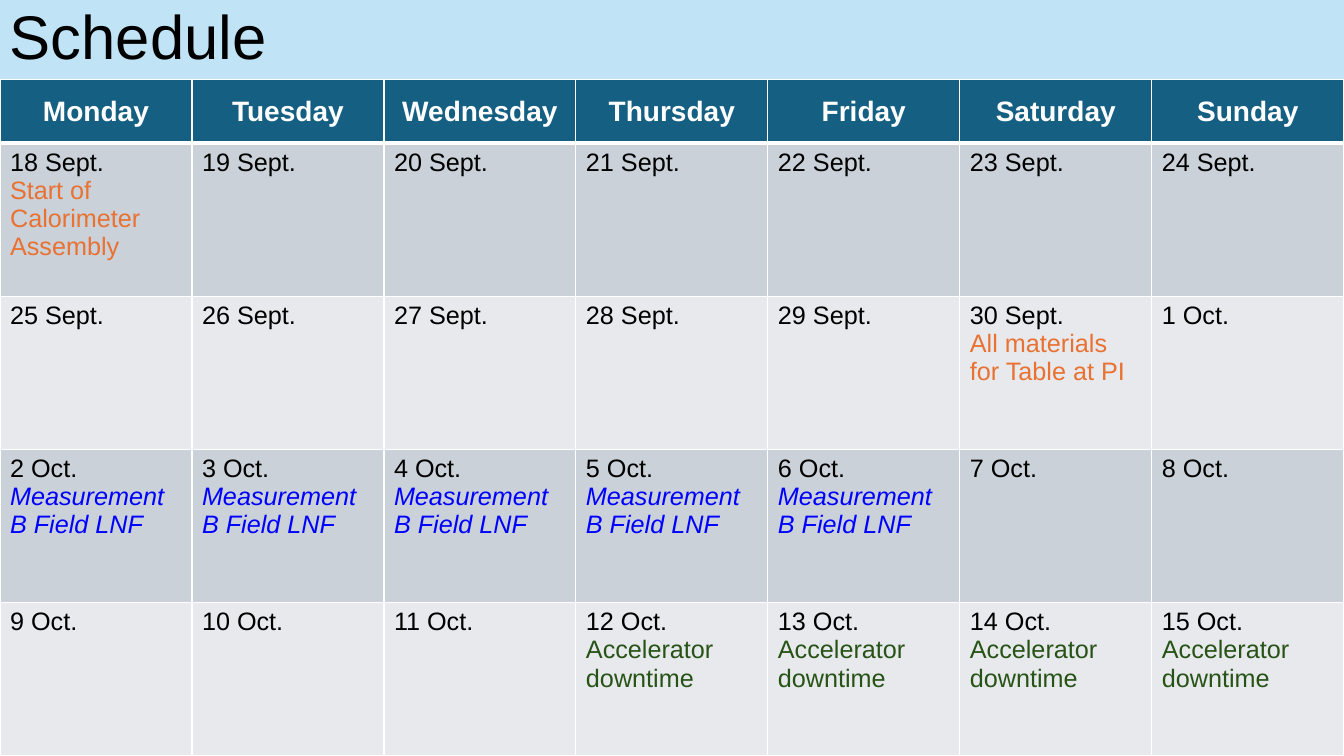
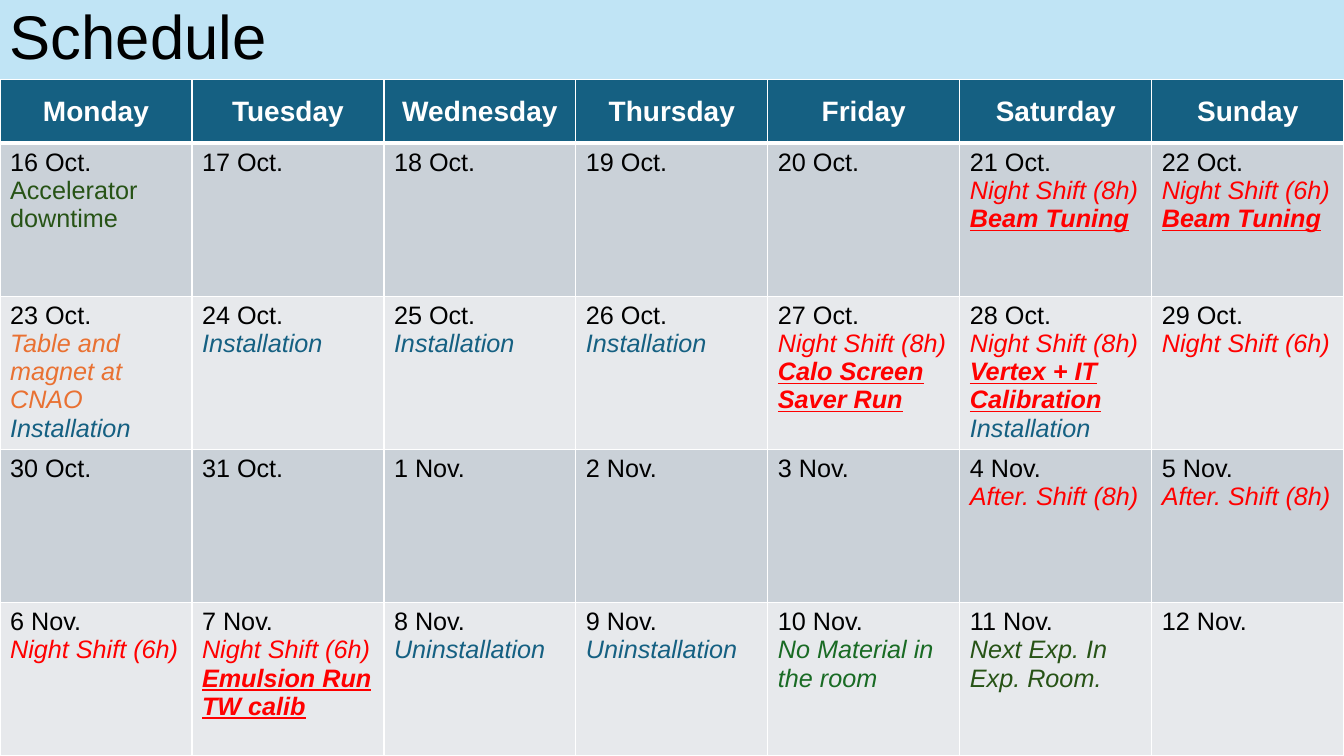
from lxml import etree
from pptx import Presentation
from pptx import util as u
from pptx.dml.color import RGBColor
from pptx.enum import shapes, text
from pptx.oxml import ns

FONT = "Arial"
COLOURS = {
    "band": "C0E4F5",
    "header": "156082",
    "odd_week": "CAD1D8",
    "even_week": "E7E9EC",
    "white": "FFFFFF",
    "black": "000000",
    "orange": "E97132",
    "blue": "0000FF",
    "dark_green": "275316",
    "green": "196B24",
    "teal": "156082",
    "red": "FF0000",
}
STYLES = {
    "date": ("black", False, False),
    "delivery": ("orange", False, False),
    "transport": ("orange", True, False),
    "field": ("blue", True, False),
    "downtime": ("dark_green", False, False),
    "next": ("dark_green", True, False),
    "clear": ("green", True, False),
    "install": ("teal", True, False),
    "shift": ("red", True, False),
    "run": ("red", True, True),
}
DAYS = ["Monday", "Tuesday", "Wednesday", "Thursday", "Friday", "Saturday", "Sunday"]
WEEKS = 4
MONTHS = [("Sept.", 18, 30), ("Oct.", 1, 31), ("Nov.", 1, 12)]
DATES = [f"{day} {month}" for month, first, last in MONTHS for day in range(first, last + 1)]

MEASUREMENT = [("field", "Measurement B Field LNF")]
DOWNTIME = [("downtime", "Accelerator downtime")]
INSTALLATION = [("install", "Installation")]
UNINSTALLATION = [("install", "Uninstallation")]
LONG_NIGHT = [("shift", "Night Shift (8h)")]
SHORT_NIGHT = [("shift", "Night Shift (6h)")]
AFTERNOON = [("shift", "After. Shift (8h)")]
TUNING = [("run", "Beam Tuning")]

EVENTS = {
    "18 Sept.": [("delivery", "Start of Calorimeter Assembly")],
    "30 Sept.": [("delivery", "All materials for Table at PI")],
    **{f"{day} Oct.": MEASUREMENT for day in range(2, 7)},
    **{f"{day} Oct.": DOWNTIME for day in range(12, 17)},
    "21 Oct.": LONG_NIGHT + TUNING,
    "22 Oct.": SHORT_NIGHT + TUNING,
    "23 Oct.": [("transport", "Table and magnet at CNAO")] + INSTALLATION,
    **{f"{day} Oct.": INSTALLATION for day in range(24, 27)},
    "27 Oct.": LONG_NIGHT + [("run", "Calo Screen Saver Run")],
    "28 Oct.": LONG_NIGHT + [("run", "Vertex + IT Calibration")] + INSTALLATION,
    "29 Oct.": SHORT_NIGHT,
    "4 Nov.": AFTERNOON,
    "5 Nov.": AFTERNOON,
    "6 Nov.": SHORT_NIGHT,
    "7 Nov.": SHORT_NIGHT + [("run", "Emulsion Run"), ("run", "TW calib")],
    "8 Nov.": UNINSTALLATION,
    "9 Nov.": UNINSTALLATION,
    "10 Nov.": [("clear", "No Material in the room")],
    "11 Nov.": [("next", "Next Exp. In Exp. Room.")],
}


def rgb(name):
    return RGBColor.from_string(COLOURS[name])


def set_font(paragraph, size, colour, bold=False, italic=False, underline=False):
    font = paragraph.font
    font.name = FONT
    font.size = u.Pt(size)
    font.bold = bold
    font.italic = italic
    font.underline = underline
    font.color.rgb = rgb(colour)


def paint_cell(cell, colour, top=1, bottom=1):
    properties = cell._tc.get_or_add_tcPr()
    for side, width in (("L", 1), ("R", 1), ("T", top), ("B", bottom)):
        line = etree.SubElement(properties, ns.qn(f"a:ln{side}"), w=str(u.Pt(width)))
        fill = etree.SubElement(line, ns.qn("a:solidFill"))
        etree.SubElement(fill, ns.qn("a:srgbClr"), val=COLOURS["white"])
    cell.fill.solid()
    cell.fill.fore_color.rgb = rgb(colour)


def add_title_band(slide, left, top, width, height):
    band = slide.shapes.add_shape(shapes.MSO_SHAPE.RECTANGLE, left, top, width, height)
    band.shadow.inherit = False
    band.fill.solid()
    band.fill.fore_color.rgb = rgb("band")
    band.line.fill.background()
    band.text_frame.word_wrap = True
    band.text_frame.vertical_anchor = text.MSO_ANCHOR.MIDDLE
    paragraph = band.text_frame.paragraphs[0]
    paragraph.text = "Schedule"
    paragraph.alignment = text.PP_ALIGN.LEFT
    paragraph.line_spacing = 0.9
    set_font(paragraph, 44, "black")


def fill_header(cell, day):
    paint_cell(cell, "header", bottom=3)
    cell.vertical_anchor = text.MSO_ANCHOR.MIDDLE
    paragraph = cell.text_frame.paragraphs[0]
    paragraph.text = day
    paragraph.alignment = text.PP_ALIGN.CENTER
    set_font(paragraph, 20, "white", bold=True)


def fill_date(cell, date, week):
    paint_cell(cell, "even_week" if week % 2 else "odd_week", top=1 if week else 3)
    entries = [("date", date)] + EVENTS.get(date, [])
    cell.text = "\n".join(words for _, words in entries)
    for paragraph, (style, _) in zip(cell.text_frame.paragraphs, entries):
        colour, italic, strong = STYLES[style]
        set_font(paragraph, 18, colour, strong, italic, strong)


def add_calendar(slide, dates, left, top, width, height):
    table = slide.shapes.add_table(WEEKS + 1, len(DAYS), left, top, width, height).table
    header_height = u.Inches(0.63)
    table.rows[0].height = header_height
    for week in range(WEEKS):
        table.rows[week + 1].height = (height - header_height) // WEEKS
    for column, day in enumerate(DAYS):
        table.columns[column].width = width // len(DAYS)
        fill_header(table.cell(0, column), day)
    for index, date in enumerate(dates):
        week, column = divmod(index, len(DAYS))
        fill_date(table.cell(week + 1, column), date, week)


def add_schedule_slide(presentation, dates):
    slide = presentation.slides.add_slide(presentation.slide_layouts[6])
    width, height = presentation.slide_width, presentation.slide_height
    band_height = u.Inches(0.79)
    add_title_band(slide, 0, 0, width, band_height)
    add_calendar(slide, dates, 0, band_height, width, height - band_height)


def main():
    presentation = Presentation()
    presentation.slide_width = u.Inches(13.33)
    presentation.slide_height = u.Inches(7.5)
    days_per_slide = WEEKS * len(DAYS)
    for start in range(0, len(DATES), days_per_slide):
        add_schedule_slide(presentation, DATES[start:start + days_per_slide])
    presentation.save("out.pptx")


if __name__ == "__main__":
    main()
